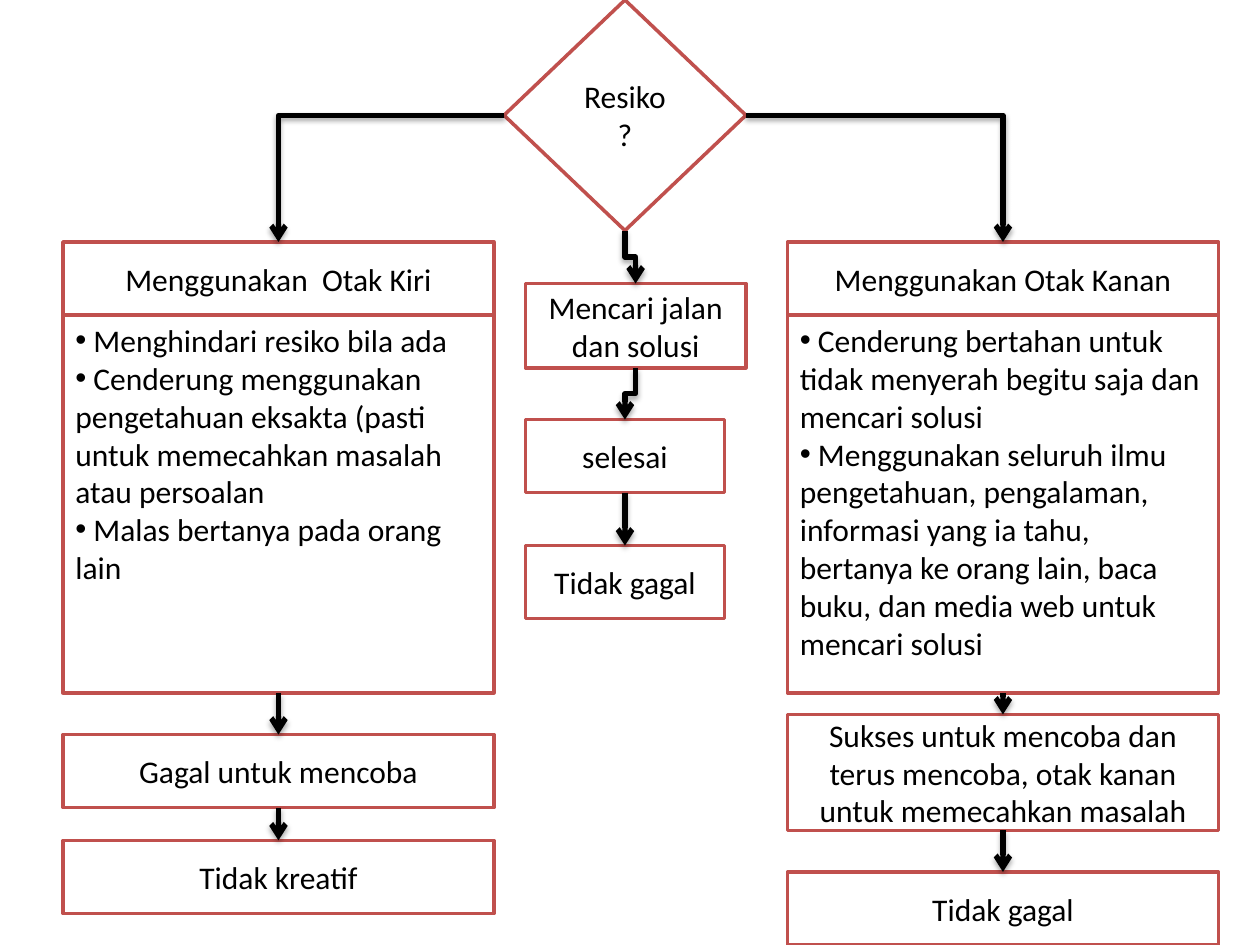
from lxml.etree import SubElement
from pptx import Presentation
from pptx.dml.color import RGBColor
from pptx.enum.shapes import MSO_CONNECTOR, MSO_SHAPE
from pptx.enum.text import MSO_ANCHOR, PP_ALIGN
from pptx.oxml import parse_xml
from pptx.oxml.ns import nsdecls, qn
from pptx.util import Inches, Pt

# Connection sites shared by rectangles and decision diamonds
TOP, LEFT, BOTTOM, RIGHT = range(4)

SHADOW = f"""<a:effectLst {nsdecls('a')}>
  <a:outerShdw blurRad="39370" dist="22860" dir="5400000" rotWithShape="0">
    <a:srgbClr val="000000"><a:alpha val="35000"/></a:srgbClr>
  </a:outerShdw>
</a:effectLst>"""


def color(value):
    return RGBColor.from_string(value)


class FlowChart:
    font_name = "Calibri"
    font_size = Pt(18)
    ink = "000000"
    paper = "FFFFFF"
    border = "C0504D"

    def __init__(self, page):
        self.page = page

    def node(self, text, left, top, width, height, kind=MSO_SHAPE.RECTANGLE):
        """Outlined shape with centred text."""
        box = self.page.shapes.add_shape(
            kind, Inches(left), Inches(top), Inches(width), Inches(height))
        box.shadow.inherit = False
        box.fill.solid()
        box.fill.fore_color.rgb = color(self.paper)
        box.line.color.rgb = color(self.border)
        box.line.width = Pt(2)
        frame = box.text_frame
        frame.text = text
        frame.word_wrap = True
        frame.vertical_anchor = MSO_ANCHOR.MIDDLE
        for para in frame.paragraphs:
            para.alignment = PP_ALIGN.CENTER
            for span in para.runs:
                span.font.name = self.font_name
                span.font.size = self.font_size
                span.font.color.rgb = color(self.ink)
        return box

    def bullets(self, items, left, top, width, height):
        """Outlined box with a bullet list starting at its top."""
        box = self.node("\n".join(items), left, top, width, height)
        box.text_frame.vertical_anchor = MSO_ANCHOR.TOP
        for para in box.text_frame.paragraphs:
            para.alignment = PP_ALIGN.LEFT
            properties = para._p.get_or_add_pPr()
            SubElement(properties, qn("a:buFont"), typeface="Arial")
            SubElement(properties, qn("a:buChar"), char="•")
        return box

    def arrow(self, start, end, site=BOTTOM):
        """Elbow arrow from one site of start to the top of end."""
        line = self.page.shapes.add_connector(MSO_CONNECTOR.ELBOW, 0, 0, 0, 0)
        line.begin_connect(start, site)
        line.end_connect(end, TOP)
        line.line.color.rgb = color(self.ink)
        line.line.width = Pt(3)
        SubElement(line.line._get_or_add_ln(), qn("a:tailEnd"), type="arrow")
        properties = line._element.spPr
        properties.append(parse_xml(SHADOW))

        # Orient the elbow: one bend from the sides, two bends from below
        across = line.end_x - line.begin_x
        center_x = (line.begin_x + line.end_x) // 2
        center_y = (line.begin_y + line.end_y) // 2
        frame = properties.find(qn("a:xfrm"))
        for flip in ("flipH", "flipV"):
            frame.attrib.pop(flip, None)
        if site == BOTTOM:
            line.width, line.height = line.height, line.width
            line.left = center_x - line.width // 2
            line.top = center_y - line.height // 2
            frame.set("rot", "16200000" if across > 0 else "5400000")
            if across > 0:
                frame.set("flipH", "1")
        else:
            properties.find(qn("a:prstGeom")).set("prst", "bentConnector2")
            if across < 0:
                frame.set("rot", "10800000")
                frame.set("flipV", "1")


def main():
    deck = Presentation()
    deck.slide_width, deck.slide_height = Inches(10), Inches(7.5)
    chart = FlowChart(deck.slides.add_slide(deck.slide_layouts[6]))

    left_x, middle_x, right_x = 0.5, 4.17, 6.25
    wide, narrow, row = 3.42, 1.58, 0.58

    # Question
    risk = chart.node("Resiko ?", 4, 0, 1.92, 1.83,
                      MSO_SHAPE.FLOWCHART_DECISION)

    # Left brain branch
    left_head = chart.node("Menggunakan  Otak Kiri", left_x, 1.92, wide, row)
    left_list = chart.bullets([
        " Menghindari resiko bila ada",
        " Cenderung menggunakan pengetahuan eksakta (pasti untuk memecahkan "
        "masalah atau persoalan",
        " Malas bertanya pada orang lain",
    ], left_x, 2.5, wide, 3)
    failed = chart.node("Gagal untuk mencoba", left_x, 5.83, wide, row)
    uncreative = chart.node("Tidak kreatif", left_x, 6.67, wide, row)

    # Right brain branch
    right_head = chart.node("Menggunakan Otak Kanan", right_x, 1.92, wide, row)
    right_list = chart.bullets([
        " Cenderung bertahan untuk tidak menyerah begitu saja dan mencari "
        "solusi",
        " Menggunakan seluruh ilmu pengetahuan, pengalaman, informasi yang "
        "ia tahu, bertanya ke orang lain, baca buku, dan media web untuk "
        "mencari solusi",
    ], right_x, 2.5, wide, 3)
    success = chart.node(
        "Sukses untuk mencoba dan terus mencoba, otak kanan untuk memecahkan "
        "masalah", right_x, 5.67, wide, 0.92)
    right_end = chart.node("Tidak gagal", right_x, 6.92, wide, row)

    # Middle branch
    search = chart.node("Mencari jalan dan solusi", middle_x, 2.25, 1.75, 0.67)
    done = chart.node("selesai", middle_x, 3.33, narrow, row)
    middle_end = chart.node("Tidak gagal", middle_x, 4.33, narrow, row)

    # Arrows
    chart.arrow(risk, right_head, RIGHT)
    chart.arrow(risk, left_head, LEFT)
    for start, end in [
        (risk, search), (search, done), (done, middle_end),
        (left_list, failed), (failed, uncreative),
        (right_list, success), (success, right_end),
    ]:
        chart.arrow(start, end)

    deck.save("out.pptx")


if __name__ == "__main__":
    main()
